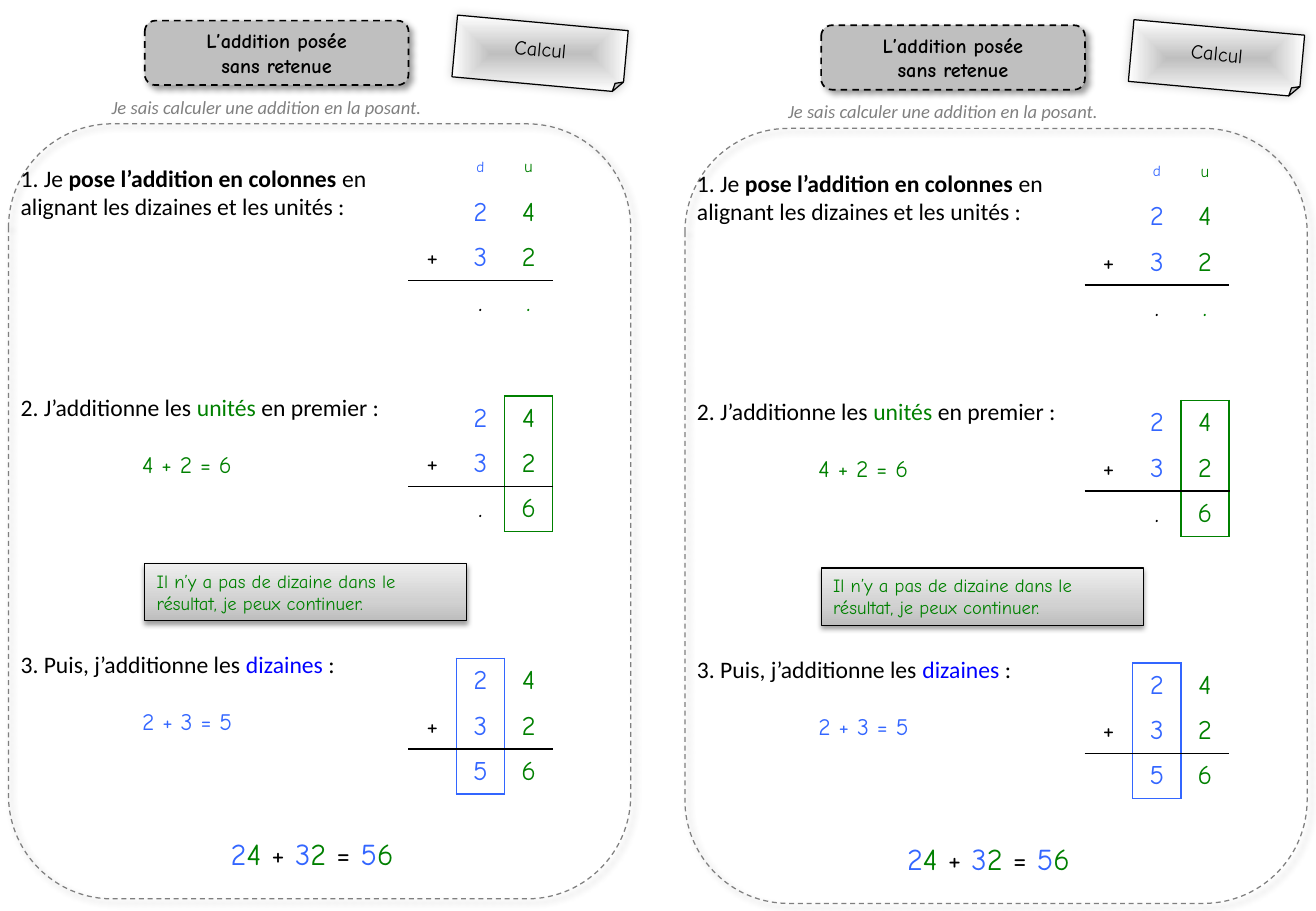
from pptx import Presentation, util as u
from pptx.dml.color import RGBColor
from pptx.enum import dml, shapes, text
from pptx.oxml import parse_xml
from pptx.oxml.ns import nsdecls

THEME = {
    "body": "Calibri", "hand": "Comic Neue",
    "ink": "000000", "grey": "808080", "frame": "7F7F7F", "panel": "BFBFBF",
    "tens": "3366FF", "units": "008000", "tens_word": "0000FF",
    "title": 12, "small": 11, "step": 14, "digit": 16, "sum": 18,
    "tens_head": 9, "units_head": 10,
}
NO_TABLE_STYLE = "{2D5ABB26-0587-4C30-8999-92F81FD0307C}"
NOTE_FILL = [(0, "BDBDBD"), (35, "D1D1D1"), (100, "EEEEEE")], '<a:lin ang="16200000" scaled="0"/>'
LABEL_FILL = ([(0, THEME["panel"]), (100, "FFFFFF")],
              '<a:path path="shape"><a:fillToRect l="50000" t="50000" r="50000" b="50000"/></a:path>')
SOFT_SHADOW = 40, 4, 3, 45     # opacity %, blur pt, distance pt, angle
LABEL_SHADOW = 20, 6, 0, 315
NOTE_SHADOW = 38, 3.1, 1.6, 90

deck = Presentation()
deck.slide_width, deck.slide_height = u.Inches(10.83), u.Inches(7.5)
page = deck.slides.add_slide(deck.slide_layouts[6])
COLUMN, ROW = deck.slide_width / 100, deck.slide_height / 100   # 1 % of the slide


def write(para, font, size, spans, style=""):
    """Add spans of (text, theme colour); style is "bold" or "italic"."""
    for words, colour in spans:
        span = para.add_run()
        span.text = words
        span.font.name, span.font.size = THEME[font], u.Pt(THEME[size])
        span.font.color.rgb = RGBColor.from_string(THEME[colour])
        span.font.bold, span.font.italic = style == "bold", style == "italic"


def add_box(kind, left, top, width, height, line=None, shadow=None, gradient=None):
    """Add a shape, or a text box when kind is None, sized in shares of the slide."""
    area = [int(v) for v in (left * COLUMN, top * ROW, width * COLUMN, height * ROW)]
    if kind is None:
        box = page.shapes.add_textbox(*area)
    else:
        box = page.shapes.add_shape(kind, *area)
        colour, weight, dash = line
        box.line.color.rgb = RGBColor.from_string(THEME[colour])
        box.line.width, box.line.dash_style = u.Pt(weight), dash
        box.shadow.inherit = False
        opacity, blur, distance, angle = shadow
        box.element.spPr.find("{*}effectLst").append(parse_xml(
            f'<a:outerShdw {nsdecls("a")} blurRad="{u.Pt(blur)}" dist="{u.Pt(distance)}" '
            f'dir="{angle * 60000}" algn="tl" rotWithShape="0"><a:srgbClr val="{THEME["ink"]}">'
            f'<a:alpha val="{opacity * 1000}"/></a:srgbClr></a:outerShdw>'))
    if gradient:
        stops, direction = gradient
        marks = "".join(f'<a:gs pos="{at * 1000}"><a:srgbClr val="{c}"/></a:gs>' for at, c in stops)
        box.element.spPr.insert(2, parse_xml(
            f'<a:gradFill {nsdecls("a")} rotWithShape="1"><a:gsLst>{marks}</a:gsLst>{direction}</a:gradFill>'))
    box.text_frame.word_wrap = True
    return box


DASH, SOLID = dml.MSO_LINE.DASH, dml.MSO_LINE.SOLID
KIND = shapes.MSO_SHAPE
CENTER = text.PP_ALIGN.CENTER

# Each step paragraph: space before, left indent in inches, font, spans, style
STEPS = [
    (0, 0, "body", [
        ("1. Je ", "ink", ""), ("pose l’addition en colonnes ", "ink", "bold"),
        ("en alignant les dizaines et les unités :", "ink", "")]),
    (102, 0, "body", [
        ("2. J’additionne les ", "ink", ""), ("unités ", "units", ""), ("en premier :", "ink", "")]),
    (17, 1, "hand", [("4 + 2 = 6", "units", "")]),
    (102, 0, "body", [
        ("3. Puis, j’additionne les ", "ink", ""), ("dizaines", "tens_word", ""), (" :", "ink", "")]),
    (17, 1, "hand", [("2 + 3 = 5", "tens", "")]),
]
# Each column addition: top, rows of cells, boxed column and its colour
ADDITIONS = [
    (15.87, ["", "d", "u"], [".", "."], None, None),
    (43.47, None, [".", "6"], 2, "units"),
    (72.27, None, ["5", "6"], 1, "tens"),
]

for card in range(2):
    dx, dy = card * 51.4, card * 0.5

    title = add_box(KIND.ROUNDED_RECTANGLE, 11 + dx, 2.27 + dy, 20.04, 7.07,
                    ("ink", 1, DASH), SOFT_SHADOW)
    title.fill.solid()
    title.fill.fore_color.rgb = RGBColor.from_string(THEME["panel"])
    title_lines = [title.text_frame.paragraphs[0], title.text_frame.add_paragraph()]
    for para, words in zip(title_lines, ["L’addition posée", "sans retenue"]):
        para.alignment = CENTER
        write(para, "hand", "title", [(words, "ink")], "bold")

    label = add_box(KIND.FOLDED_CORNER, 34.53 + dx, 2.5 + dy, 13.02, 6.8,
                    ("ink", 0.75, SOLID), LABEL_SHADOW, LABEL_FILL)
    label.rotation = 5.2
    label.text_frame.paragraphs[0].alignment = CENTER
    write(label.text_frame.paragraphs[0], "hand", "title", [("Calcul", "ink")])

    frame = add_box(KIND.ROUNDED_RECTANGLE, 0.65 + dx, 13.6 + dy, 47.28, 85.07,
                    ("frame", 0.75, DASH), SOFT_SHADOW)
    frame.fill.background()

    goal = add_box(None, 7.57 + dx, 9.87 + dy, 27.05, 3.87)
    write(goal.text_frame.paragraphs[0], "body", "small",
          [("Je sais calculer une addition en la posant.", "grey")], "italic")

    steps = add_box(None, 0.65 + dx, 17.33 + dy, 30.38, 67.33)
    for number, (space, indent, font, spans) in enumerate(STEPS):
        para = steps.text_frame.add_paragraph() if number else steps.text_frame.paragraphs[0]
        para.space_before = u.Pt(space)
        para._p.get_or_add_pPr().set("marL", str(u.Inches(indent)))
        for words, colour, style in spans:
            write(para, font, "step", [(words, colour)], style)

    for top, heading, result, boxed, box_colour in ADDITIONS:
        rows = ([heading] if heading else []) + [["", "2", "4"], ["+", "3", "2"], ["", *result]]
        last = len(rows) - 1
        grid = page.shapes.add_table(
            len(rows), 3, int((31.02 + dx) * COLUMN), int((top + dy) * ROW),
            int(3 * 3.66 * COLUMN), int(len(rows) * 4.97 * ROW)).table
        grid.first_row = grid.horz_banding = False
        grid._tbl.tblPr[0].text = NO_TABLE_STYLE
        for r, row in enumerate(rows):
            for c, words in enumerate(row):
                cell = grid.cell(r, c)
                cell.margin_top = cell.margin_bottom = u.Inches(0.02)
                cell.vertical_anchor = text.MSO_ANCHOR.MIDDLE
                edges = {}
                if boxed is not None:
                    if c in (boxed, boxed + 1):
                        edges["L"] = box_colour
                    if c in (boxed - 1, boxed):
                        edges["R"] = box_colour
                    if c == boxed and r == 0:
                        edges["T"] = box_colour
                    if c == boxed and r == last:
                        edges["B"] = box_colour
                if r == last:
                    edges["T"] = "ink"
                if r == last - 1:
                    edges["B"] = "ink"
                for side in "LRTB":
                    if side in edges:
                        cell._tc.get_or_add_tcPr().append(parse_xml(
                            f'<a:ln{side} {nsdecls("a")} w="{u.Pt(1)}"><a:solidFill>'
                            f'<a:srgbClr val="{THEME[edges[side]]}"/></a:solidFill></a:ln{side}>'))
                cell.fill.background()
                if words:
                    size = {"d": "tens_head", "u": "units_head"}.get(words, "digit")
                    colour = ["ink", "tens", "units"][c]
                    if words == "." and c == 1:
                        colour = "ink"
                    para = cell.text_frame.paragraphs[0]
                    para.alignment = CENTER
                    write(para, "hand", size, [(words, colour)])

    note = add_box(KIND.RECTANGLE, 11 + dx, 61.87 + dy, 24.47, 6.27,
                   ("ink", 0.75, SOLID), NOTE_SHADOW, NOTE_FILL)
    note.text_frame.vertical_anchor = text.MSO_ANCHOR.TOP
    note.text_frame.paragraphs[0].alignment = text.PP_ALIGN.LEFT
    write(note.text_frame.paragraphs[0], "hand", "small",
          [("Il n’y a pas de dizaine dans le résultat, je peux continuer.", "units")])

    total = add_box(None, 16.62 + dx, 91.07 + dy, 15.51, 5.33)
    write(total.text_frame.paragraphs[0], "hand", "sum", [
        ("2", "tens"), ("4", "units"), (" + ", "ink"), ("3", "tens"),
        ("2 ", "units"), ("= ", "ink"), ("5", "tens"), ("6", "units")])

deck.save("out.pptx")
